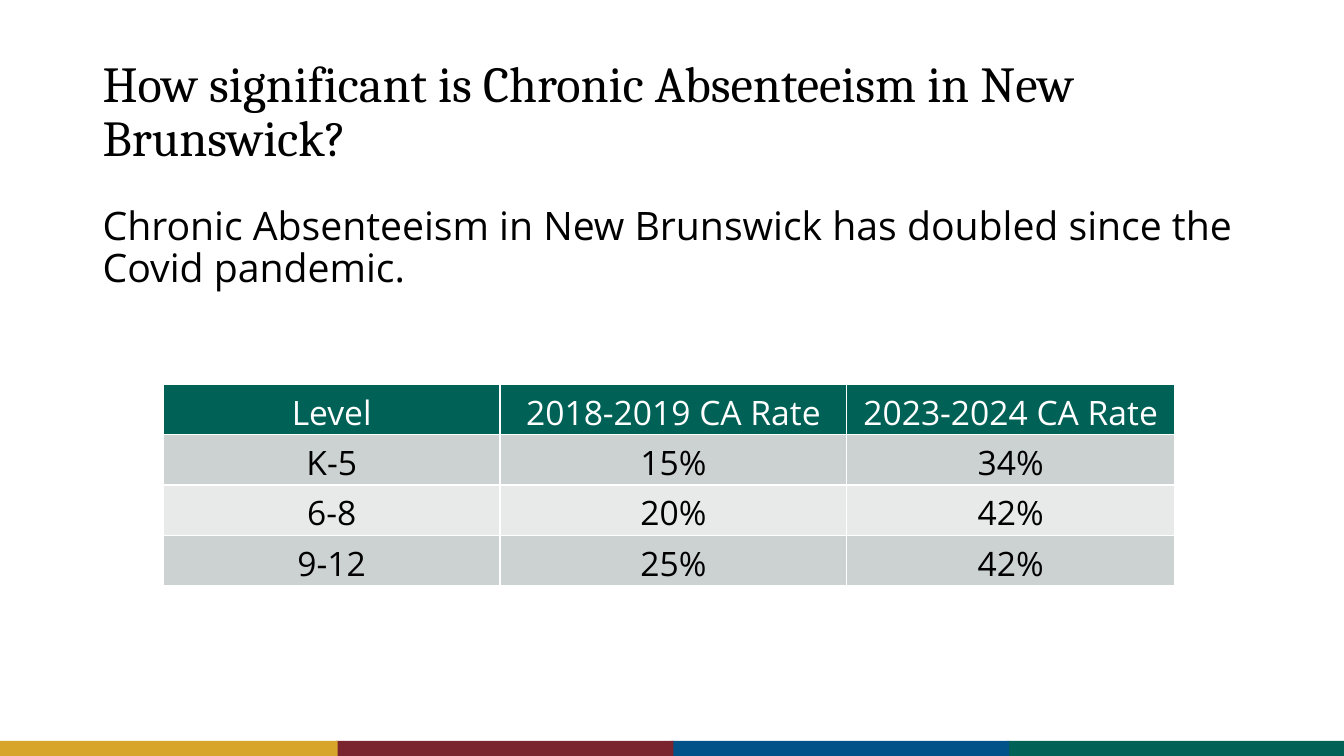
import pptx
import pptx.util
import pptx.dml.color
import pptx.enum.shapes
import pptx.enum.text

Inches = pptx.util.Inches
Pt = pptx.util.Pt

COLOURS = {
    "gold": "D7A52A",
    "maroon": "79242F",
    "blue": "005289",
    "green": "006156",
    "black": "000000",
    "white": "FFFFFF",
    "dark band": "CCD2D1",
    "light band": "E7EAE9",
}


def fill_solid(part, colour):
    part.fill.solid()
    part.fill.fore_color.rgb = pptx.dml.color.RGBColor.from_string(COLOURS[colour])


def style_font(paragraph, face, size, colour):
    paragraph.font.name = face
    paragraph.font.size = Pt(size)
    paragraph.font.bold = False
    paragraph.font.color.rgb = pptx.dml.color.RGBColor.from_string(COLOURS[colour])


presentation = pptx.Presentation()
presentation.slide_width = Inches(13.33)
presentation.slide_height = Inches(7.5)
slide = presentation.slides.add_slide(presentation.slide_layouts[6])

# Footer stripe in four colours, each overlapping the next slightly
for index, colour in reversed(list(enumerate(["gold", "maroon", "blue", "green"]))):
    stripe = slide.shapes.add_shape(
        pptx.enum.shapes.MSO_SHAPE.RECTANGLE,
        Inches(3.33 * index), Inches(7.35), Inches(3.35), Inches(0.15))
    stripe.shadow.inherit = False
    stripe.line.fill.background()
    fill_solid(stripe, colour)

# Title and statement
MIDDLE = pptx.enum.text.MSO_ANCHOR.MIDDLE
TOP = pptx.enum.text.MSO_ANCHOR.TOP
for words, top, height, anchor, face, size, space_before in [
    ("How significant is Chronic Absenteeism in New Brunswick?",
     0.4, 1.45, MIDDLE, "Cambria", 36, 0),
    ("Chronic Absenteeism in New Brunswick has doubled since the Covid pandemic.",
     2, 3.29, TOP, "Open Sans", 28, 10),
]:
    box = slide.shapes.add_textbox(Inches(0.92), Inches(top), Inches(11.5), Inches(height))
    box.text_frame.word_wrap = True
    box.text_frame.vertical_anchor = anchor
    paragraph = box.text_frame.paragraphs[0]
    paragraph.text = words
    paragraph.line_spacing = 0.9
    paragraph.space_before = Pt(space_before)
    style_font(paragraph, face, size, "black")

# Chronic absenteeism (CA) rates; the table style draws the white rules
rates = [
    ["Level", "2018-2019 CA Rate", "2023-2024 CA Rate"],
    ["K-5", "15%", "34%"],
    ["6-8", "20%", "42%"],
    ["9-12", "25%", "42%"],
]
rate_table = slide.shapes.add_table(
    len(rates), len(rates[0]), Inches(1.62), Inches(3.81), Inches(10.03), Inches(2)).table
for column, width in zip(rate_table.columns, [3.34, 3.44, 3.25]):
    column.width = Inches(width)

for row, values in enumerate(rates):
    if row == 0:
        band, ink = "green", "white"
    else:
        band, ink = ("dark band" if row % 2 else "light band"), "black"
    for column, value in enumerate(values):
        cell = rate_table.cell(row, column)
        fill_solid(cell, band)
        paragraph = cell.text_frame.paragraphs[0]
        paragraph.text = value
        paragraph.alignment = pptx.enum.text.PP_ALIGN.CENTER
        style_font(paragraph, "Open Sans", 24, ink)

presentation.save("out.pptx")
